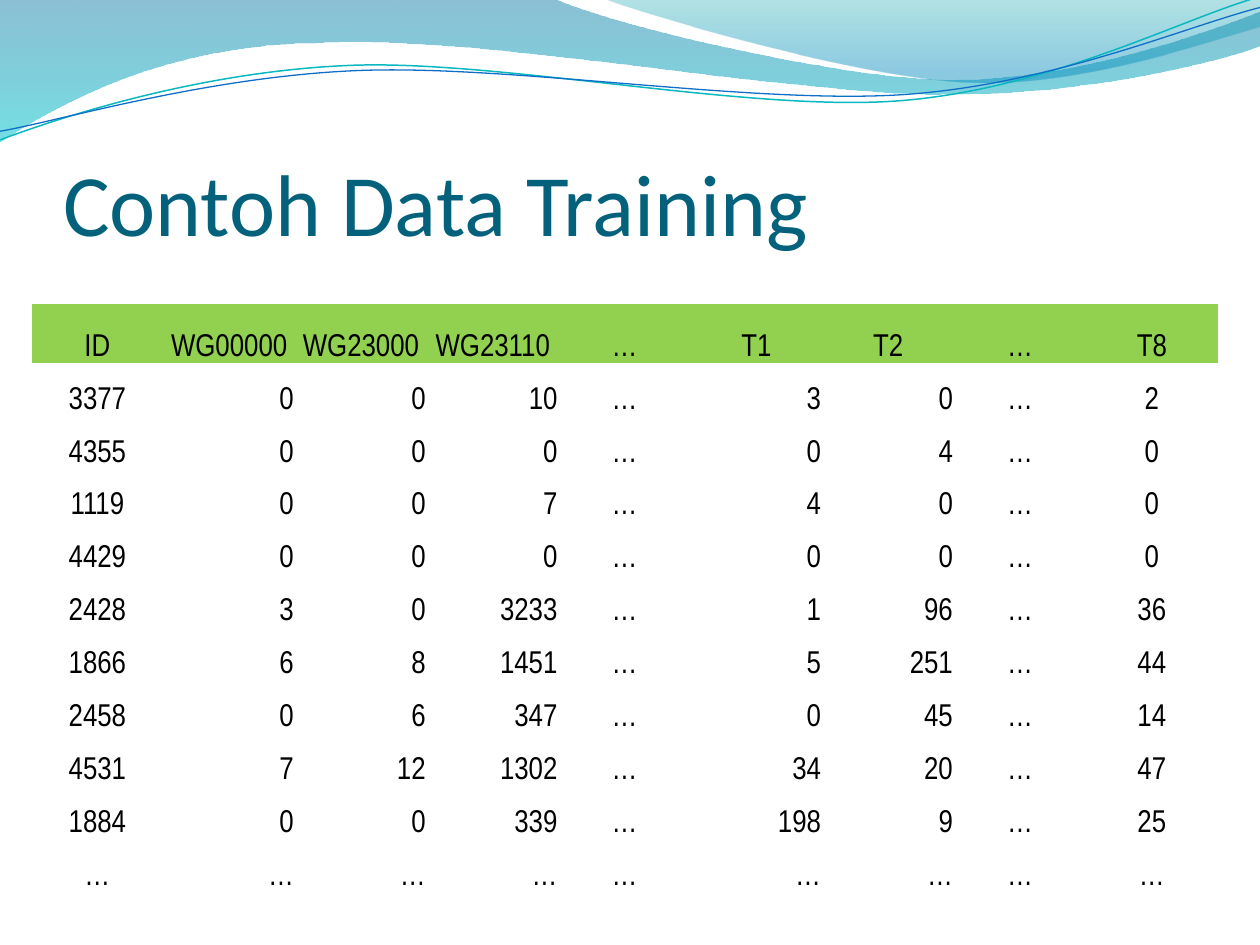
from pptx import Presentation
from pptx.dml.color import RGBColor
from pptx.enum.text import MSO_ANCHOR, PP_ALIGN
from pptx.oxml.ns import qn
from pptx.oxml.xmlchemy import OxmlElement
from pptx.util import Pt

BLACK = RGBColor(0x00, 0x00, 0x00)
TITLE_BLUE = RGBColor(0x04, 0x61, 0x7B)
HEADER_GREEN = RGBColor(0x92, 0xD0, 0x50)
DEEP_BLUE = RGBColor(0x00, 0x74, 0xA1)
CYAN = RGBColor(0x00, 0xC6, 0xCF)
TEAL = RGBColor(0x00, 0xA1, 0xA9)
SKY_BLUE = RGBColor(0x00, 0x8B, 0xBF)
LINE_TEAL = RGBColor(0x0A, 0xB8, 0xBF)
LINE_BLUE = RGBColor(0x0F, 0x6F, 0xC6)

TITLE = "Contoh Data Training"
HEADER = ["ID", "WG00000", "WG23000", "WG23110", "…", "T1", "T2", "…", "T8"]
ROWS = [
    ["3377", "0", "0", "10", "…", "3", "0", "…", "2"],
    ["4355", "0", "0", "0", "…", "0", "4", "…", "0"],
    ["1119", "0", "0", "7", "…", "4", "0", "…", "0"],
    ["4429", "0", "0", "0", "…", "0", "0", "…", "0"],
    ["2428", "3", "0", "3233", "…", "1", "96", "…", "36"],
    ["1866", "6", "8", "1451", "…", "5", "251", "…", "44"],
    ["2458", "0", "6", "347", "…", "0", "45", "…", "14"],
    ["4531", "7", "12", "1302", "…", "34", "20", "…", "47"],
    ["1884", "0", "0", "339", "…", "198", "9", "…", "25"],
    ["…"] * len(HEADER),
]
RIGHT_ALIGNED = {1, 2, 3, 5, 6}

# Each path is a start point, then steps: one point is a line, three are a Bézier curve.
# Each gradient stop is position, colour, opacity in percent.
WAVES = [
    ([(0, -0.7),
      [(316.8, -0.7)],
      [(342.7, 12.2), (478.1, 45.4), (545.8, 45.4)],
      [(614.2, 45.4), (689.8, 18.7), (720, 6.5)],
      [(720.7, 25.9)],
      [(707.8, 31.7), (626.4, 54.7), (537.1, 54)],
      [(447.8, 54), (275, 20.2), (185, 24.5)],
      [(92.9, 25.2), (33.1, 59.8), (-0.7, 81.4)],
      [(0, -0.7)]],
     [(0, DEEP_BLUE, 45), (1, CYAN, 55)]),
    ([(344.9, -0.7),
      [(366.5, 7.9), (491, 44.6), (553.7, 46.8)],
      [(616.3, 49.7), (691.9, 23), (720, 15.1)],
      [(720, 0)],
      [(344.9, -0.7)]],
     [(0, TEAL, 30), (0.8, SKY_BLUE, 45)]),
]
# Ripples are given level and then turned by RIPPLE_ROTATION.
RIPPLES = [
    ([(-1.4, 63),
      [(33.8, 51.7), (114.1, 29.4), (199.8, 29.9)],
      [(284.8, 30.3), (425.8, 67.3), (512.4, 64.9)],
      [(599, 62.4), (676.5, 25.7), (720.2, 15.5)]],
     LINE_TEAL, 0.85),
    ([(-1.1, 58),
      [(32.9, 53.8), (118.3, 32.5), (204.1, 33)],
      [(290.6, 33.4), (428.9, 63.1), (515.5, 61.4)],
      [(601.3, 59.6), (678.4, 30.1), (721.4, 21.3)]],
     LINE_BLUE, 0.75),
]
RIPPLE_ROTATION = 357.3

TABLE_LEFT, TABLE_TOP = 18, 174
COLUMN_WIDTH, HEADER_HEIGHT, ROW_HEIGHT = 75.33, 33.4, 30.26
CELL_MARGIN = 0.75
NO_STYLE_NO_GRID = "{2D5ABB26-0587-4C30-8999-92F81FD0307C}"


def write_text(frame, text, *, size, font, color, align=PP_ALIGN.LEFT):
    paragraph = frame.paragraphs[0]
    paragraph.alignment = align
    run = paragraph.add_run()
    run.text = text
    run.font.size = Pt(size)
    run.font.name = font
    run.font.color.rgb = color


def add_outline(slide, path, close):
    """Draw straight segments through all points, then merge each three into a curve."""
    start, *steps = path
    builder = slide.shapes.build_freeform(Pt(start[0]), Pt(start[1]))
    builder.add_line_segments([(Pt(x), Pt(y)) for step in steps for x, y in step], close=close)
    shape = builder.convert_to_shape()
    shape.shadow.inherit = False
    segments = iter(list(shape._element.iter(qn("a:lnTo"))))
    for step in steps:
        lines = [next(segments) for _ in step]
        if len(lines) == 3:
            curve = OxmlElement("a:cubicBezTo")
            lines[0].addprevious(curve)
            for line in lines:
                curve.append(line[0])
                line.getparent().remove(line)
    return shape


def add_wave(slide, path, stops):
    shape = add_outline(slide, path, close=True)
    shape.line.fill.background()
    shape.fill.gradient()
    shape.fill.gradient_angle = 270
    for stop, (position, color, _) in zip(shape.fill.gradient_stops, stops):
        stop.position = position
        stop.color.rgb = color
    for element, (_, _, opacity) in zip(shape._element.iter(qn("a:gs")), stops):
        alpha = OxmlElement("a:alpha")
        alpha.set("val", str(opacity * 1000))
        element[0].append(alpha)


def add_ripple(slide, path, color, width):
    shape = add_outline(slide, path, close=False)
    shape.rotation = RIPPLE_ROTATION
    shape.fill.background()
    shape.line.color.rgb = color
    shape.line.width = Pt(width)


def add_data_table(slide):
    rows = [HEADER, *ROWS]
    frame = slide.shapes.add_table(
        len(rows), len(HEADER), Pt(TABLE_LEFT), Pt(TABLE_TOP),
        Pt(COLUMN_WIDTH * len(HEADER)), Pt(HEADER_HEIGHT + ROW_HEIGHT * len(ROWS)))
    table = frame.table
    table.horz_banding = False
    next(frame._element.iter(qn("a:tableStyleId"))).text = NO_STYLE_NO_GRID
    for column in table.columns:
        column.width = Pt(COLUMN_WIDTH)
    for row_index, values in enumerate(rows):
        is_header = row_index == 0
        table.rows[row_index].height = Pt(HEADER_HEIGHT if is_header else ROW_HEIGHT)
        for column_index, value in enumerate(values):
            cell = table.cell(row_index, column_index)
            cell.margin_left = cell.margin_right = cell.margin_top = Pt(CELL_MARGIN)
            cell.margin_bottom = 0
            cell.vertical_anchor = MSO_ANCHOR.BOTTOM
            if is_header:
                cell.fill.solid()
                cell.fill.fore_color.rgb = HEADER_GREEN
            else:
                cell.fill.background()
            to_right = not is_header and column_index in RIGHT_ALIGNED
            write_text(cell.text_frame, value, size=18, font="Arial Narrow", color=BLACK,
                       align=PP_ALIGN.RIGHT if to_right else PP_ALIGN.CENTER)


def place_title(slide):
    title = slide.shapes.title
    title.left, title.top, title.width, title.height = Pt(36), Pt(55.4), Pt(653.8), Pt(90)
    frame = title.text_frame
    frame.margin_left = frame.margin_right = frame.margin_bottom = 0
    frame.margin_top = Pt(3.6)
    frame.vertical_anchor = MSO_ANCHOR.BOTTOM
    write_text(frame, TITLE, size=50, font="Calibri", color=TITLE_BLUE)


def main():
    presentation = Presentation()
    presentation.slide_width, presentation.slide_height = Pt(720), Pt(540)
    slide = presentation.slides.add_slide(presentation.slide_layouts[5])
    for path, stops in WAVES:
        add_wave(slide, path, stops)
    for path, color, width in RIPPLES:
        add_ripple(slide, path, color, width)
    add_data_table(slide)
    place_title(slide)
    presentation.save("out.pptx")


if __name__ == "__main__":
    main()
